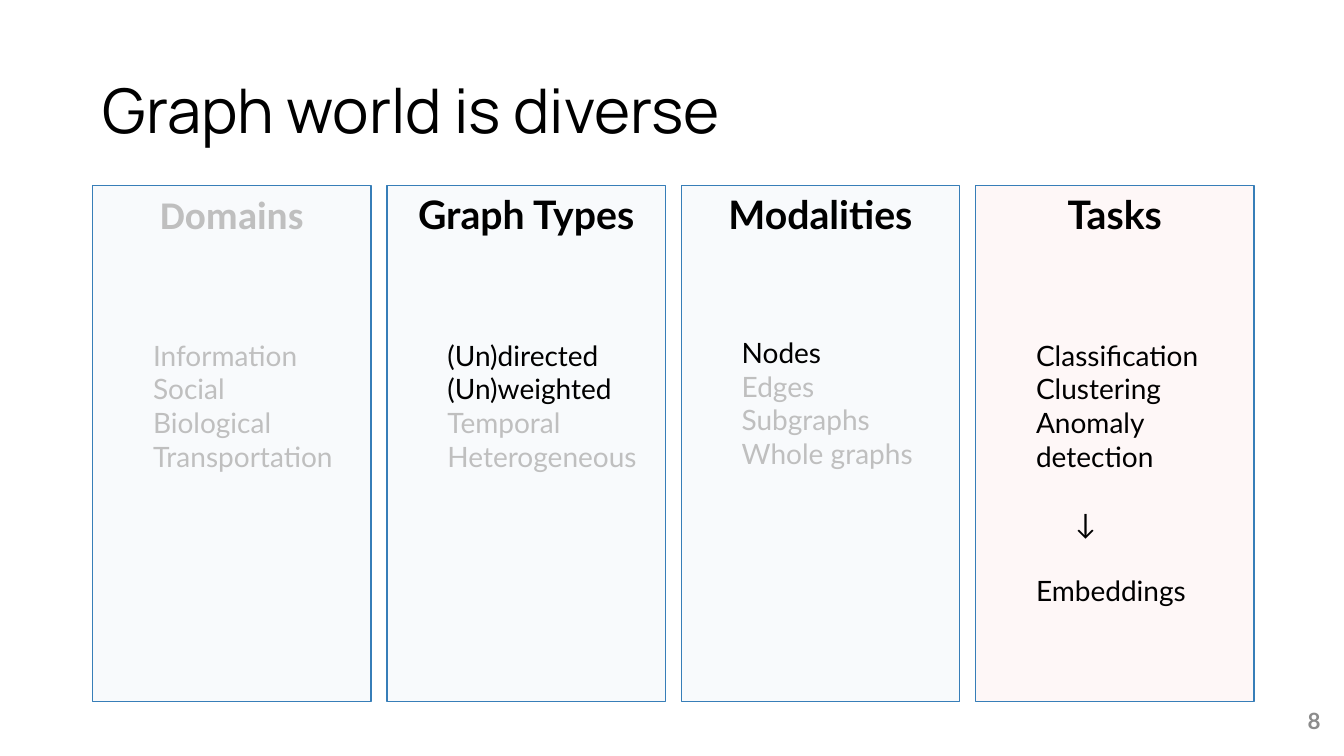
import pptx
import pptx.util
import pptx.dml.color
import pptx.enum.shapes
import pptx.enum.text
from lxml import etree

Pt = pptx.util.Pt
RGBColor = pptx.dml.color.RGBColor
ALIGN = pptx.enum.text.PP_ALIGN
ANCHOR = pptx.enum.text.MSO_ANCHOR

BLACK = RGBColor(0x00, 0x00, 0x00)
MUTED = RGBColor(0xBF, 0xBF, 0xBF)
NUMBER_GREY = RGBColor(0x8C, 0x8C, 0x8C)
BLUE = RGBColor(0x37, 0x7E, 0xB8)
RED = RGBColor(0xE4, 0x1A, 0x1C)

TITLE = "Graph world is diverse"
SLIDE_NUMBER = "8"
ARROW = "↓"
COLUMNS = [
    {"heading": "Domains", "font": "Calibri", "color": MUTED, "tint": BLUE, "gap": 72,
     "items": [("Information", MUTED), ("Social", MUTED),
               ("Biological", MUTED), ("Transportation", MUTED)]},
    {"heading": "Graph Types", "font": "Lato", "color": BLACK, "tint": BLUE, "gap": 72,
     "items": [("(Un)directed", BLACK), ("(Un)weighted", BLACK),
               ("Temporal", MUTED), ("Heterogeneous", MUTED)]},
    {"heading": "Modalities", "font": "Lato", "color": BLACK, "tint": BLUE, "gap": 70,
     "items": [("Nodes", BLACK), ("Edges", MUTED),
               ("Subgraphs", MUTED), ("Whole graphs", MUTED)]},
    {"heading": "Tasks", "font": "Lato", "color": BLACK, "tint": RED, "gap": 72,
     "items": [("Classification", BLACK), ("Clustering", BLACK),
               ("Anomaly detection", BLACK), (ARROW, BLACK), ("Embeddings", BLACK)]},
]

COLUMN_LEFT, COLUMN_TOP = 66.24, 132.48
COLUMN_WIDTH, COLUMN_HEIGHT = 198.72, 368.64
COLUMN_PITCH = 210.24
ITEM_INDENT, ARROW_INDENT = 36, 64
LINE = 24
TINT_ALPHA = "3000"


def style(paragraph, text, font, size, color, bold=False, align=ALIGN.LEFT):
    paragraph.text = text
    paragraph.alignment = align
    paragraph.font.name = font
    paragraph.font.size = Pt(size)
    paragraph.font.bold = bold
    paragraph.font.color.rgb = color


def add_label(slide, box, *text_style, **options):
    frame = slide.shapes.add_textbox(*map(Pt, box)).text_frame
    frame.word_wrap = True
    frame.vertical_anchor = ANCHOR.MIDDLE
    style(frame.paragraphs[0], *text_style, **options)
    return frame.paragraphs[0]


def add_column(slide, index, column):
    panel = slide.shapes.add_shape(
        pptx.enum.shapes.MSO_SHAPE.ROUNDED_RECTANGLE,
        Pt(COLUMN_LEFT + index * COLUMN_PITCH), Pt(COLUMN_TOP),
        Pt(COLUMN_WIDTH), Pt(COLUMN_HEIGHT))
    panel.adjustments[0] = 0
    panel.shadow.inherit = False
    panel.fill.solid()
    panel.fill.fore_color.rgb = column["tint"]
    tint = panel.fill._xPr.find(".//" + pptx.oxml.ns.qn("a:srgbClr"))
    etree.SubElement(tint, pptx.oxml.ns.qn("a:alpha"), val=TINT_ALPHA)
    panel.line.color.rgb = BLUE
    panel.line.width = Pt(1)

    frame = panel.text_frame
    frame.word_wrap = True
    frame.vertical_anchor = ANCHOR.TOP
    style(frame.paragraphs[0], column["heading"], column["font"], 28,
          column["color"], bold=True, align=ALIGN.CENTER)
    for position, (item, color) in enumerate(column["items"]):
        paragraph = frame.add_paragraph()
        style(paragraph, item, "Lato", 20, color)
        paragraph.level = 1
        indent = ARROW_INDENT if item == ARROW else ITEM_INDENT
        properties = paragraph._p.get_or_add_pPr()
        properties.set("marL", str(Pt(indent)))
        properties.set("indent", "0")
        if position == 0:
            paragraph.space_before = Pt(column["gap"])
        if item == ARROW:
            paragraph.space_before = paragraph.space_after = Pt(LINE)


def main():
    deck = pptx.Presentation()
    deck.slide_width, deck.slide_height = Pt(960), Pt(540)
    slide = deck.slides.add_slide(deck.slide_layouts[6])
    title = add_label(slide, (66.24, 28.8, 828, 104.4), TITLE, "Manrope", 44, BLACK)
    title.line_spacing = 0.9
    add_label(slide, (734.4, 500.4, 216, 28.8), SLIDE_NUMBER, "Lato", 16,
              NUMBER_GREY, bold=True, align=ALIGN.RIGHT)
    for index, column in enumerate(COLUMNS):
        add_column(slide, index, column)
    deck.save("out.pptx")


if __name__ == "__main__":
    main()
